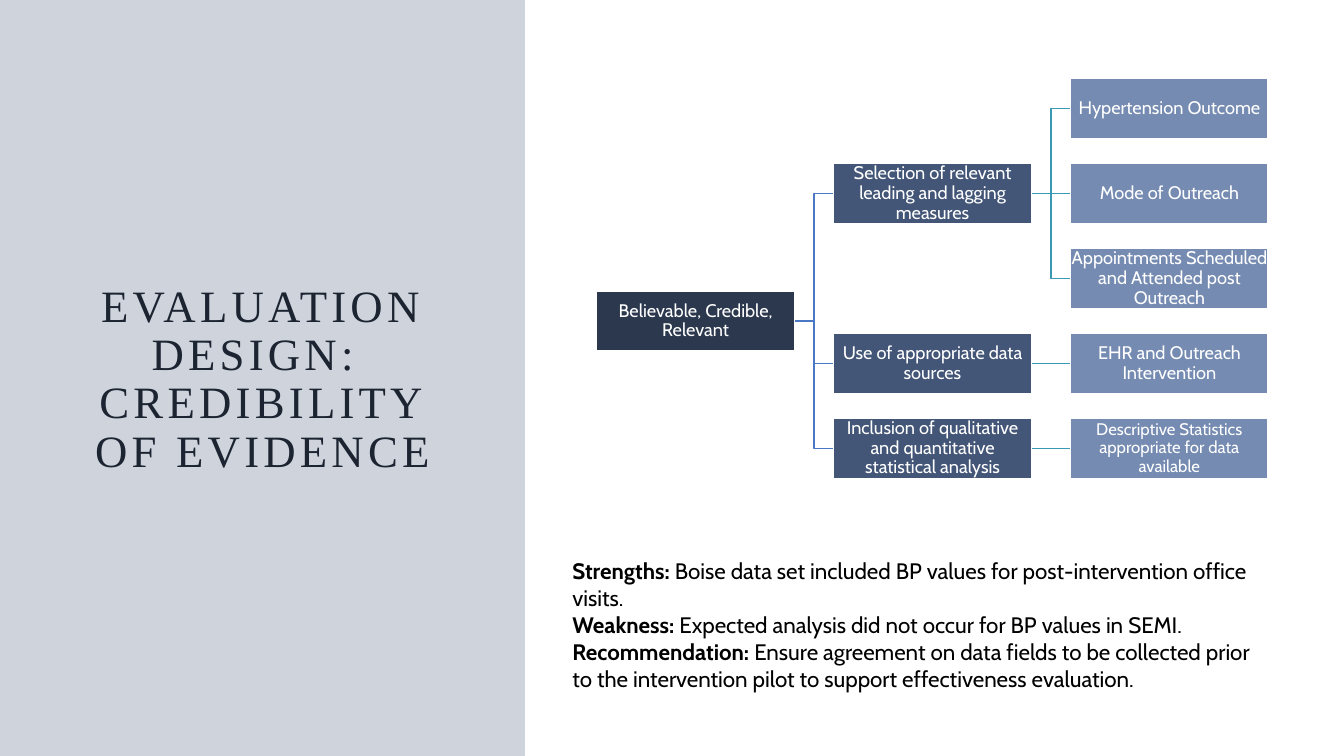
from dataclasses import dataclass

from lxml.etree import SubElement
from pptx import Presentation
from pptx.dml.color import RGBColor
from pptx.enum.shapes import MSO_CONNECTOR as Link, MSO_SHAPE as Shape
from pptx.enum.text import MSO_ANCHOR as Anchor, MSO_AUTO_SIZE as Fit, PP_ALIGN as Align
from pptx.oxml.ns import qn
from pptx.util import Cm, Pt

TITLE = "EVALUATION DESIGN: \vCREDIBILITY OF EVIDENCE"
ROOT = "Believable, Credible, Relevant"
BRANCHES = [
    ("Selection of relevant leading and lagging measures", [
        "Hypertension Outcome",
        "Mode of Outreach",
        "Appointments Scheduled and Attended post Outreach",
    ]),
    ("Use of appropriate data sources", ["EHR and Outreach Intervention"]),
    ("Inclusion of qualitative and quantitative statistical analysis", [
        "Descriptive Statistics appropriate for data available",
    ]),
]
SMALL_LABELS = {"Descriptive Statistics appropriate for data available"}
FINDINGS = [
    ("Strengths: ", "Boise data set included BP values for post-intervention office visits."),
    ("Weakness: ", "Expected analysis did not occur for BP values in SEMI."),
    ("Recommendation: ", "Ensure agreement on data fields to be collected prior to the "
                         "intervention pilot to support effectiveness evaluation."),
]


@dataclass(frozen=True)
class Theme:
    title_font: str = "Times New Roman"
    body_font: str = "Cabin"
    title_size: int = 32
    findings_size: int = 16
    box_size: int = 13
    small_size: int = 12
    title_color: str = "1C2432"
    text_color: str = "000000"
    white: str = "FFFFFF"
    panel: str = "435677"
    panel_alpha: int = 25000
    levels: tuple = ("2C384E", "435677", "758BB1")
    links: tuple = ("4B78C5", "3999B3")


THEME = Theme()
PAGE_WIDTH, PAGE_HEIGHT = 33.87, 19.05
PANEL_WIDTH = 13.23
TITLE_AREA = (1.9, 1.96, 9.43, 15.24)
FINDINGS_AREA = (14.17, 13.92, 17.78, 3.68)
TREE_LEFT, TREE_TOP = 15.04, 1.98
BOX_WIDTH, BOX_HEIGHT = 4.98, 1.52
COLUMN_STEP, ROW_STEP = 5.97, 2.14
BOX_INSET = 0.02


def apply(target, formats):
    for name, value in formats.items():
        setattr(target, name, value)


def place(shape, area):
    apply(shape, dict(zip(("left", "top", "width", "height"), map(Cm, area))))


def style_font(font, name, size, color, bold=False):
    apply(font, {"name": name, "size": Pt(size), "bold": bold})
    font.color.rgb = RGBColor.from_string(color)


def add_box(page, area, fill):
    box = page.shapes.add_shape(Shape.RECTANGLE, *map(Cm, area))
    box.shadow.inherit = False
    box.fill.solid()
    box.fill.fore_color.rgb = RGBColor.from_string(fill)
    return box


def add_node(page, label, level, row):
    area = (TREE_LEFT + level * COLUMN_STEP, TREE_TOP + row * ROW_STEP, BOX_WIDTH, BOX_HEIGHT)
    box = add_box(page, area, THEME.levels[level])
    box.line.color.rgb = RGBColor.from_string(THEME.white)
    box.line.width = Pt(1)
    frame = box.text_frame
    apply(frame, {"word_wrap": True, "vertical_anchor": Anchor.MIDDLE})
    apply(frame, dict.fromkeys(
        ("margin_left", "margin_top", "margin_right", "margin_bottom"), Cm(BOX_INSET)))
    para = frame.paragraphs[0]
    apply(para, {"text": label, "alignment": Align.CENTER, "line_spacing": 0.9})
    size = THEME.small_size if label in SMALL_LABELS else THEME.box_size
    style_font(para.runs[0].font, THEME.body_font, size, THEME.white)
    return box


def add_link(page, parent, child, color):
    kind = Link.STRAIGHT if parent.top == child.top else Link.ELBOW
    link = page.shapes.add_connector(kind, 0, 0, 0, 0)
    link.begin_connect(parent, 3)
    link.end_connect(child, 1)
    link.line.color.rgb = RGBColor.from_string(color)
    link.line.width = Pt(1)
    SubElement(link._element.spPr, qn("a:effectLst"))
    send_to_back(page, link)


def send_to_back(page, shape):
    page.shapes._spTree.insert(2, shape._element)


def add_tree(page):
    branches, rows, next_row = [], [], 0
    for label, leaves in BRANCHES:
        row = next_row + (len(leaves) - 1) / 2
        branch = add_node(page, label, 1, row)
        for offset, leaf in enumerate(leaves):
            add_link(page, branch, add_node(page, leaf, 2, next_row + offset), THEME.links[1])
        branches.append(branch)
        rows.append(row)
        next_row += len(leaves)
    root = add_node(page, ROOT, 0, (rows[0] + rows[-1]) / 2)
    for branch in branches:
        add_link(page, root, branch, THEME.links[0])


def add_panel(page):
    panel = add_box(page, (0, 0, PANEL_WIDTH, PAGE_HEIGHT), THEME.panel)
    panel.line.fill.background()
    color = panel._element.spPr.find(qn("a:solidFill"))[0]
    SubElement(color, qn("a:alpha"), val=str(THEME.panel_alpha))
    send_to_back(page, panel)


def fill_title(title):
    place(title, TITLE_AREA)
    apply(title.text_frame, {"word_wrap": True, "auto_size": Fit.NONE,
                             "vertical_anchor": Anchor.MIDDLE})
    para = title.text_frame.paragraphs[0]
    apply(para, {"text": TITLE, "alignment": Align.CENTER, "line_spacing": 0.9})
    for span in para.runs:
        style_font(span.font, THEME.title_font, THEME.title_size, THEME.title_color)
        span._r.get_or_add_rPr().set("spc", "300")


def fill_findings(body):
    place(body, FINDINGS_AREA)
    frame = body.text_frame
    apply(frame, {"word_wrap": True, "auto_size": Fit.NONE, "vertical_anchor": Anchor.TOP})
    for index, finding in enumerate(FINDINGS):
        para = frame.add_paragraph() if index else frame.paragraphs[0]
        apply(para, {"alignment": Align.LEFT, "space_before": Pt(0), "space_after": Pt(0)})
        properties = para._p.get_or_add_pPr()
        properties.set("marL", "0")
        properties.set("indent", "0")
        SubElement(properties, qn("a:buNone"))
        for text, bold in zip(finding, (True, False)):
            span = para.add_run()
            span.text = text
            style_font(span.font, THEME.body_font, THEME.findings_size, THEME.text_color, bold)


def main():
    deck = Presentation()
    apply(deck, {"slide_width": Cm(PAGE_WIDTH), "slide_height": Cm(PAGE_HEIGHT)})
    page = deck.slides.add_slide(deck.slide_layouts[1])
    fill_title(page.shapes.title)
    add_tree(page)
    fill_findings(page.placeholders[1])
    add_panel(page)
    deck.save("out.pptx")


if __name__ == "__main__":
    main()
